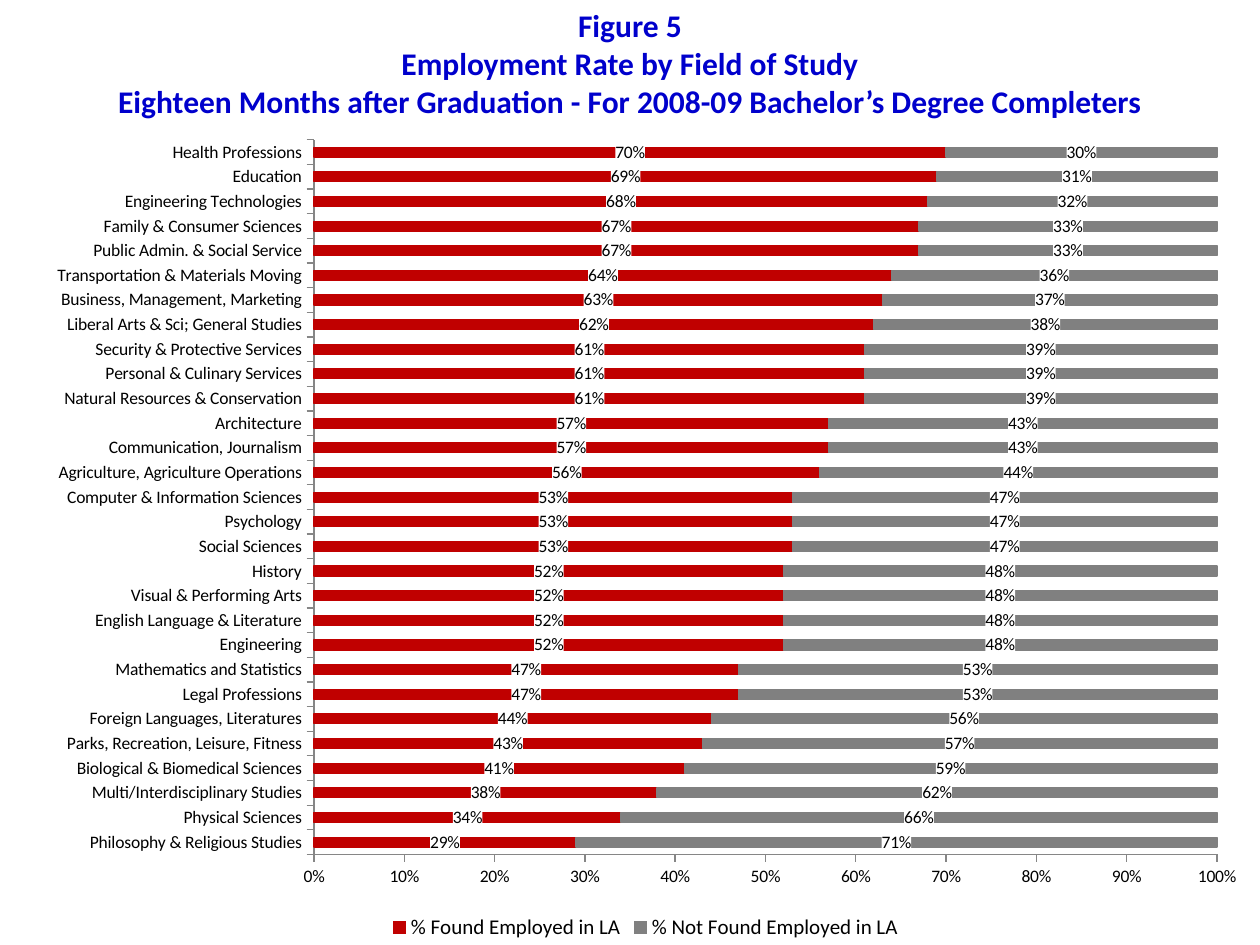
from lxml.etree import SubElement
from pptx import Presentation
from pptx.chart.data import CategoryChartData
from pptx.dml.color import RGBColor
from pptx.enum.chart import XL_CHART_TYPE, XL_LEGEND_POSITION, XL_TICK_MARK
from pptx.enum.text import MSO_ANCHOR, PP_ALIGN
from pptx.oxml import parse_xml
from pptx.oxml.ns import nsdecls, qn
from pptx.util import Inches, Pt

BLUE = RGBColor(0x00, 0x00, 0xCC)
RED = RGBColor(0xC0, 0x00, 0x00)
GREY = RGBColor(0x80, 0x80, 0x80)
AXIS_GREY = RGBColor(0x86, 0x86, 0x86)
BLACK = RGBColor(0x00, 0x00, 0x00)
FONT = "Calibri"

TITLE_LINES = [
    "Figure 5",
    "Employment Rate by Field of Study",
    "Eighteen Months after Graduation - For 2008-09 Bachelor’s Degree Completers",
]
EMPLOYED_PERCENT = {
    "Philosophy & Religious Studies": 29,
    "Physical Sciences": 34,
    "Multi/Interdisciplinary Studies": 38,
    "Biological & Biomedical Sciences": 41,
    "Parks, Recreation, Leisure, Fitness": 43,
    "Foreign Languages, Literatures": 44,
    "Legal Professions": 47,
    "Mathematics and Statistics": 47,
    "Engineering": 52,
    "English Language & Literature": 52,
    "Visual & Performing Arts": 52,
    "History": 52,
    "Social Sciences": 53,
    "Psychology": 53,
    "Computer & Information Sciences": 53,
    "Agriculture, Agriculture Operations": 56,
    "Communication, Journalism": 57,
    "Architecture": 57,
    "Natural Resources & Conservation": 61,
    "Personal & Culinary Services": 61,
    "Security & Protective Services": 61,
    "Liberal Arts & Sci; General Studies": 62,
    "Business, Management, Marketing": 63,
    "Transportation & Materials Moving": 64,
    "Public Admin. & Social Service": 67,
    "Family & Consumer Sciences": 67,
    "Engineering Technologies": 68,
    "Education": 69,
    "Health Professions": 70,
}


def set_font(font, size, color=BLACK, bold=False):
    """Apply the slide's typeface with a size, colour and weight."""
    font.name = FONT
    font.size = Pt(size)
    font.color.rgb = color
    font.bold = bold


def fill_title(title, left, top, width, height):
    """Place the three-line heading in the title placeholder."""
    title.left, title.top, title.width, title.height = left, top, width, height
    frame = title.text_frame
    frame.word_wrap = True
    frame.vertical_anchor = MSO_ANCHOR.TOP
    frame.text = "\v".join(TITLE_LINES)
    paragraph = frame.paragraphs[0]
    paragraph.alignment = PP_ALIGN.CENTER
    set_font(paragraph.font, 18, BLUE, True)


def format_series(series, color):
    """Colour one series and give it percentage labels on white."""
    series.format.fill.solid()
    series.format.fill.fore_color.rgb = color
    series.format.line.color.rgb = color
    series.format.line.width = Pt(0.75)
    labels = series.data_labels
    labels.show_value = True
    labels.number_format = "0%"
    labels.number_format_is_linked = False
    set_font(labels.font, 10)
    white_fill = parse_xml(
        f'<c:spPr {nsdecls("c", "a")}><a:solidFill>'
        '<a:srgbClr val="FFFFFF"/></a:solidFill></c:spPr>'
    )
    labels._element.find(qn("c:numFmt")).addnext(white_fill)


def set_plot_layout(chart, x, y, w, h):
    """Fix the inner plot area as fractions of the chart."""
    area = chart._chartSpace.chart.plotArea
    for old in area.findall(qn("c:layout")):
        area.remove(old)
    layout = parse_xml(f'<c:layout {nsdecls("c")}/>')
    manual = SubElement(layout, qn("c:manualLayout"))
    settings = {"layoutTarget": "inner", "xMode": "edge", "yMode": "edge",
                "x": x, "y": y, "w": w, "h": h}
    for name, value in settings.items():
        SubElement(manual, qn(f"c:{name}")).set("val", str(value))
    area.insert(0, layout)


def add_employment_chart(page, left, top, width, height):
    """Add the stacked bars of employed and not employed graduates."""
    data = CategoryChartData(number_format="0%")
    data.categories = list(EMPLOYED_PERCENT)
    employed = EMPLOYED_PERCENT.values()
    data.add_series("% Found Employed in LA", [value / 100 for value in employed])
    data.add_series("% Not Found Employed in LA",
                    [(100 - value) / 100 for value in employed])
    chart = page.shapes.add_chart(
        XL_CHART_TYPE.BAR_STACKED, left, top, width, height, data).chart
    chart.has_title = False
    set_font(chart.font, 10)
    plot = chart.plots[0]
    plot.gap_width = 150
    plot.overlap = 100
    plot.vary_by_categories = False
    for series, color in zip(plot.series, (RED, GREY)):
        format_series(series, color)

    for axis in (chart.category_axis, chart.value_axis):
        axis.has_major_gridlines = False
        axis.major_tick_mark = XL_TICK_MARK.OUTSIDE
        axis.format.line.color.rgb = AXIS_GREY
        axis.format.line.width = Pt(0.75)
        set_font(axis.tick_labels.font, 10)
    scale = chart.value_axis
    scale.minimum_scale, scale.maximum_scale, scale.major_unit = 0, 1, 0.1
    scale.tick_labels.number_format = "0%"
    scale.tick_labels.number_format_is_linked = False

    chart.has_legend = True
    chart.legend.position = XL_LEGEND_POSITION.BOTTOM
    chart.legend.include_in_layout = False
    set_font(chart.legend.font, 12)
    set_plot_layout(chart, 0.23, 0.02, 0.735, 0.87)


def main():
    """Build the slide and save the deck."""
    deck = Presentation()
    deck.slide_width, deck.slide_height = Inches(10), Inches(7.5)
    page = deck.slides.add_slide(deck.slide_layouts[5])
    fill_title(page.shapes.title, Inches(0.5), Inches(0), Inches(9), Inches(1.25))
    add_employment_chart(page, Inches(0.25), Inches(0.98), Inches(9.75), Inches(6.52))
    deck.save("out.pptx")


if __name__ == "__main__":
    main()
